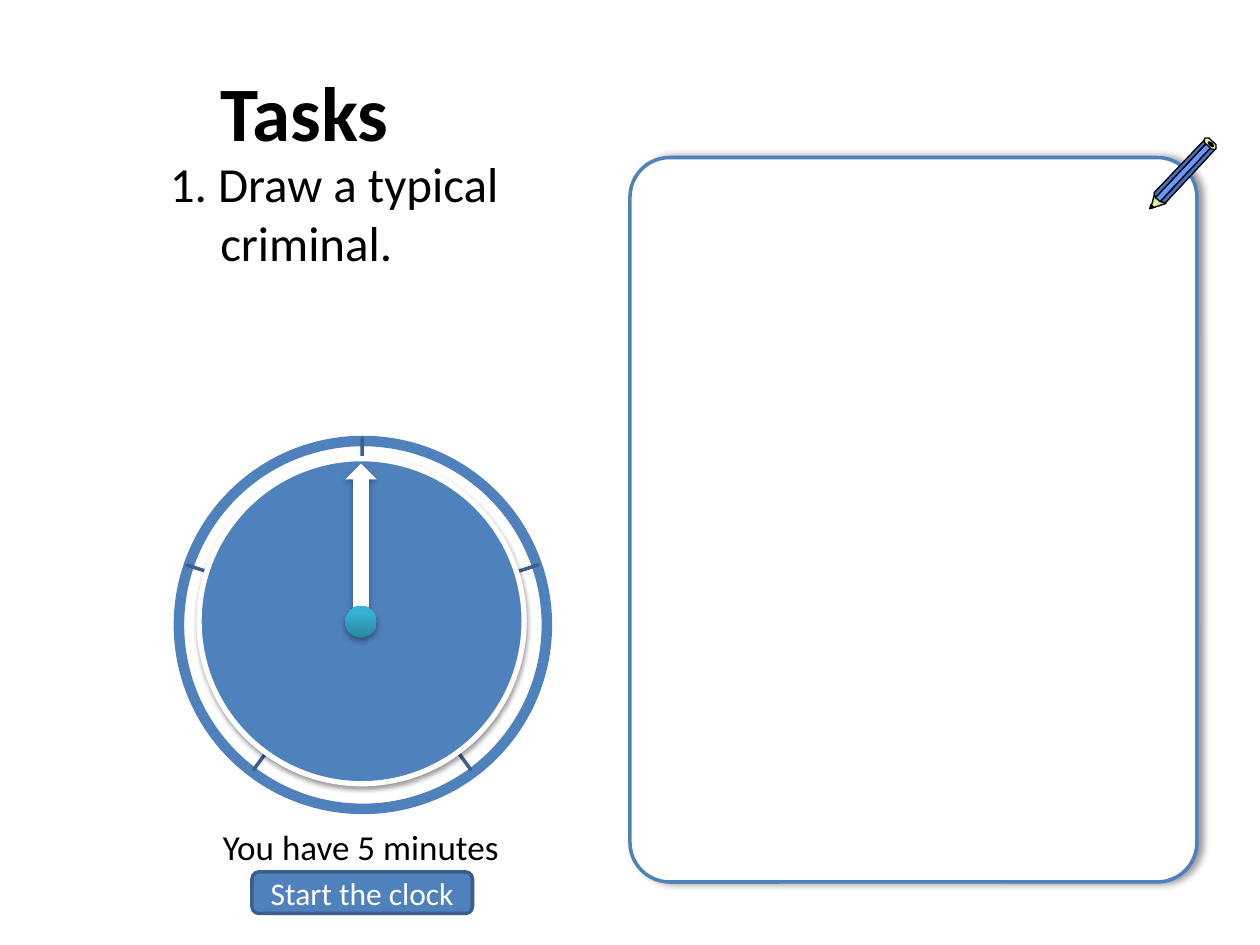
"""Build a task slide with a five-minute clock, a drawing area and a pencil."""
from dataclasses import dataclass
from typing import Optional

from lxml import etree
from pptx import Presentation
from pptx import util as u
from pptx.dml.color import RGBColor
from pptx.enum import shapes, text
from pptx.oxml import ns

KIND = shapes.MSO_SHAPE
BLUE, EDGE, WHITE, BLACK = "4F81BD", "3A5F8C", "FFFFFF", "000000"
PENCIL_BLUE, WOOD = "6699FF", "E5F9A5"
PENCIL_TURN, TIP_TURN = 313.3, 223.3


@dataclass(frozen=True)
class Gradient:
    stops: tuple[tuple[int, str], ...]
    angle: float


@dataclass(frozen=True)
class Shadow:
    opacity: int
    blur: float
    distance: float
    angle: int = 90


@dataclass(frozen=True)
class Part:
    kind: shapes.MSO_SHAPE
    box: tuple[float, float, float, float]
    fill: str | Gradient
    line: Optional[tuple[str, float]] = None
    shadow: Optional[Shadow] = None
    turn: float = 0
    adjust: Optional[float] = None


@dataclass(frozen=True)
class Label:
    words: str
    box: tuple[float, float, float, float]
    size: int
    hang: float = 0
    bold: bool = False
    align: text.PP_ALIGN = text.PP_ALIGN.LEFT
    anchor: text.MSO_ANCHOR = text.MSO_ANCHOR.TOP


OUTLINE = (BLACK, 0.75)
SOFT = Shadow(35, 3.1, 1.8)
SIDE = Gradient(((0, PENCIL_BLUE), (100, "2F4776")), 43.3)
HUB = Gradient(((0, "2A88A2"), (80, "37B1D2"), (100, "34B4D6")), 270)
TIP = Gradient(((0, "6A734C"), (50, WOOD), (100, "6A734C")), 0)

CLOCK = (
    Part(KIND.OVAL, (1.42, 3.5, 2.92, 2.92), WHITE, (BLUE, 6)),
    Part(KIND.STAR_5_POINT, (1.48, 3.48, 2.79, 2.63), BLUE, (EDGE, 2), adjust=0),
    Part(KIND.OVAL, (1.58, 3.64, 2.58, 2.58), BLUE, (WHITE, 3), Shadow(38, 3.1, 1.6)),
    Part(KIND.DOWN_ARROW, (2.74, 3.68, 0.25, 1.25), WHITE, shadow=SOFT, turn=180),
    Part(KIND.OVAL, (2.74, 4.81, 0.25, 0.25), HUB, shadow=SOFT),
)
BUTTON = Part(KIND.ROUNDED_RECTANGLE, (2, 6.92, 1.75, 0.33), BLUE, (EDGE, 2))
DRAWING_AREA = Part(KIND.ROUNDED_RECTANGLE, (5, 1.25, 4.5, 5.75), WHITE, (BLUE, 2),
                    Shadow(40, 4, 3, 0), adjust=0.07)
PENCIL_BODY = (
    Part(KIND.ISOSCELES_TRIANGLE, (9.11, 1.56, 0.12, 0.11), TIP, OUTLINE, turn=TIP_TURN),
    Part(KIND.RECTANGLE, (9.09, 1.33, 0.63, 0.05), PENCIL_BLUE, OUTLINE, turn=PENCIL_TURN),
)
PENCIL_SIDES = (
    ((9.17, 1.57), (9.16, 1.53), (9.57, 1.1), (9.6, 1.11)),
    ((9.21, 1.6), (9.25, 1.61), (9.65, 1.18), (9.64, 1.14)),
)
PENCIL_ENDS = (
    Part(KIND.OCTAGON, (9.58, 1.08, 0.05, 0.12), WOOD, OUTLINE, turn=PENCIL_TURN, adjust=0.42),
    Part(KIND.OVAL, (9.6, 1.12, 0.02, 0.05), BLACK, OUTLINE, turn=PENCIL_TURN),
    Part(KIND.ISOSCELES_TRIANGLE, (9.12, 1.63, 0.03, 0.03), BLACK, OUTLINE, turn=TIP_TURN),
)
LABELS = (
    Label("Tasks", (1.08, 0.25, 2.67, 1.25), 44, bold=True,
          align=text.PP_ALIGN.CENTER, anchor=text.MSO_ANCHOR.MIDDLE),
    Label("1. Draw a typical criminal.", (1.25, 1.17, 3.6, 1.17), 28, hang=0.4),
    Label("You have 5 minutes", (1.67, 6.5, 2.5, 0.44), 20, hang=0.38),
)


def color(code: str) -> RGBColor:
    return RGBColor.from_string(code)


def add_node(parent, tag: str, **attributes):
    return etree.SubElement(parent, ns.qn(tag), {k: str(v) for k, v in attributes.items()})


def paint(shape, fill: str | Gradient, line: Optional[tuple[str, float]],
          shadow: Optional[Shadow] = None) -> None:
    shape.fill.solid()
    if isinstance(fill, Gradient):
        properties = shape._element.spPr
        solid = properties.find(ns.qn("a:solidFill"))
        gradient = etree.Element(ns.qn("a:gradFill"), {"rotWithShape": "1"})
        stop_list = add_node(gradient, "a:gsLst")
        for position, code in fill.stops:
            stop = add_node(stop_list, "a:gs", pos=position * 1000)
            add_node(stop, "a:srgbClr", val=code)
        add_node(gradient, "a:lin", ang=round(fill.angle * 60000), scaled=0)
        properties.replace(solid, gradient)
    else:
        shape.fill.fore_color.rgb = color(fill)
    if line:
        shape.line.color.rgb = color(line[0])
        shape.line.width = u.Pt(line[1])
    else:
        shape.line.fill.background()
    shape.shadow.inherit = False
    if shadow:
        effects = shape._element.spPr.find(ns.qn("a:effectLst"))
        outer = add_node(effects, "a:outerShdw", blurRad=u.Pt(shadow.blur),
                         dist=u.Pt(shadow.distance), dir=shadow.angle * 60000,
                         rotWithShape=0)
        add_node(add_node(outer, "a:srgbClr", val=BLACK), "a:alpha", val=shadow.opacity * 1000)


def draw_part(slide, part: Part):
    shape = slide.shapes.add_shape(part.kind, *map(u.Inches, part.box))
    shape.rotation = part.turn
    if part.adjust is not None:
        shape.adjustments[0] = part.adjust
    paint(shape, part.fill, part.line, part.shadow)
    return shape


def draw_side(slide, corners: tuple[tuple[float, float], ...]) -> None:
    start, *others = [(u.Inches(x), u.Inches(y)) for x, y in corners]
    builder = slide.shapes.build_freeform(*start)
    builder.add_line_segments(others, close=True)
    paint(builder.convert_to_shape(), SIDE, OUTLINE)


def write(frame, words: str, size: int, code: str, align: text.PP_ALIGN,
          bold: bool = False):
    frame.word_wrap = True
    frame.text = words
    paragraph = frame.paragraphs[0]
    paragraph.alignment = align
    font = paragraph.runs[0].font
    font.name, font.size, font.bold = "Calibri", u.Pt(size), bold
    font.color.rgb = color(code)
    return paragraph


def draw_label(slide, label: Label) -> None:
    frame = slide.shapes.add_textbox(*map(u.Inches, label.box)).text_frame
    frame.vertical_anchor = label.anchor
    paragraph = write(frame, label.words, label.size, BLACK, label.align, label.bold)
    if label.hang:
        layout = paragraph._p.get_or_add_pPr()
        layout.set("marL", str(u.Inches(label.hang)))
        layout.set("indent", str(-u.Inches(label.hang)))


def main() -> None:
    deck = Presentation()
    deck.slide_width, deck.slide_height = u.Inches(10), u.Inches(7.5)
    slide = deck.slides.add_slide(deck.slide_layouts[6])
    for part in CLOCK:
        draw_part(slide, part)
    for label in LABELS:
        draw_label(slide, label)
    button = draw_part(slide, BUTTON).text_frame
    button.vertical_anchor = text.MSO_ANCHOR.MIDDLE
    write(button, "Start the clock", 18, WHITE, text.PP_ALIGN.CENTER)
    for part in (DRAWING_AREA, *PENCIL_BODY):
        draw_part(slide, part)
    for corners in PENCIL_SIDES:
        draw_side(slide, corners)
    for part in PENCIL_ENDS:
        draw_part(slide, part)
    deck.save("out.pptx")


if __name__ == "__main__":
    main()
